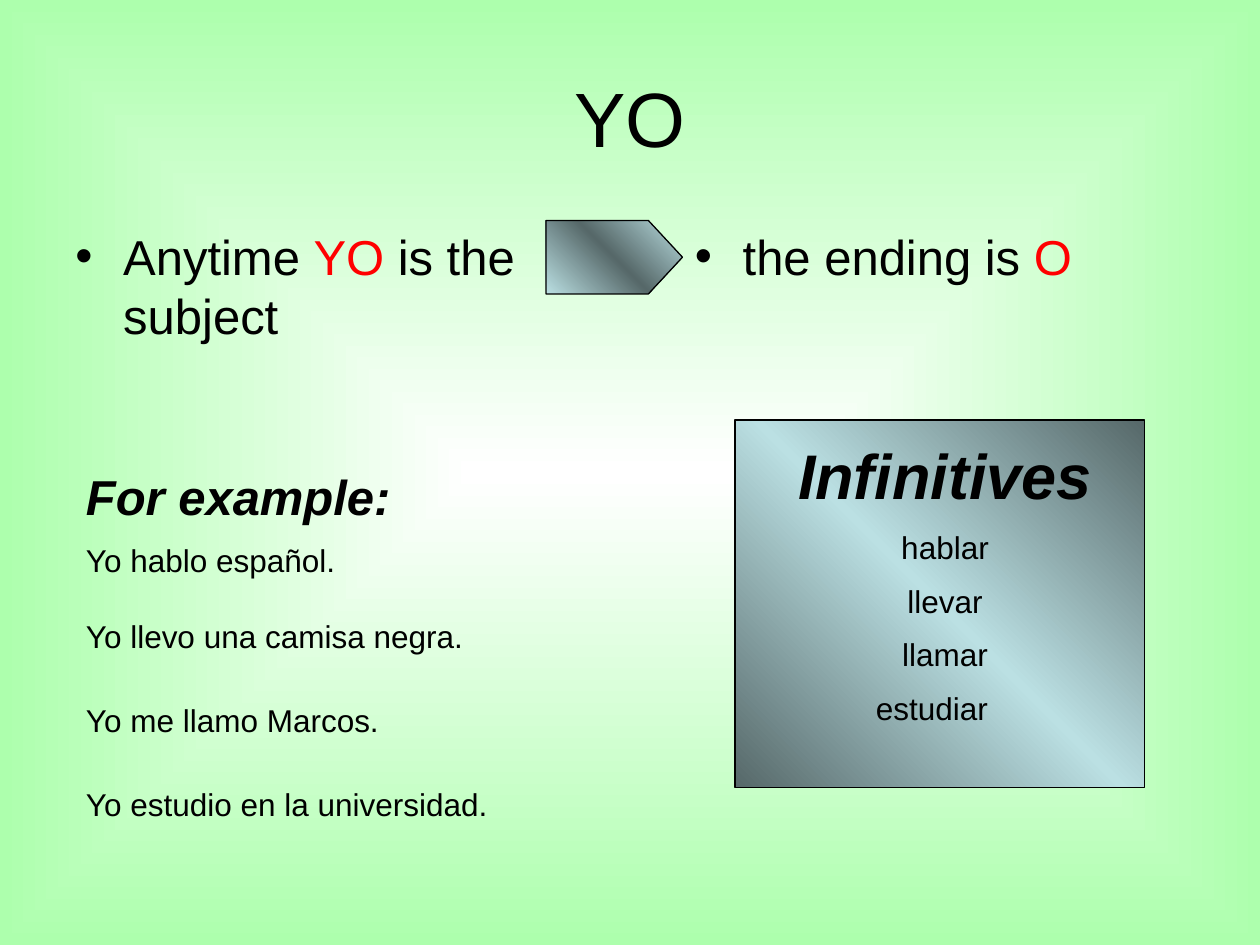
from dataclasses import dataclass

from lxml import etree
from pptx import Presentation
from pptx.dml.color import RGBColor
from pptx.enum.shapes import MSO_SHAPE
from pptx.enum.text import MSO_ANCHOR, MSO_AUTO_SIZE, PP_ALIGN
from pptx.oxml.ns import qn
from pptx.util import Inches, Pt

RECT, PENTAGON = MSO_SHAPE.RECTANGLE, MSO_SHAPE.PENTAGON
LEFT, CENTER = PP_ALIGN.LEFT, PP_ALIGN.CENTER
MIDDLE, TOP = MSO_ANCHOR.MIDDLE, MSO_ANCHOR.TOP
GROW, FIXED = MSO_AUTO_SIZE.SHAPE_TO_FIT_TEXT, MSO_AUTO_SIZE.NONE

WIDTH, HEIGHT = Inches(10), Inches(7.5)
COLS, ROWS = 120, 90
FONT = "Arial"
COLORS = {
    "text": "000000", "accent": "FF0000", "white": "FFFFFF",
    "green": "ADFFAD", "light": "BBE0E3", "dark": "566869",
}


@dataclass
class Box:
    col: float
    row: float
    cols: float
    rows: float

    def emu(self) -> tuple[int, int, int, int]:
        return (round(self.col * WIDTH / COLS), round(self.row * HEIGHT / ROWS),
                round(self.cols * WIDTH / COLS), round(self.rows * HEIGHT / ROWS))


@dataclass
class Run:
    text: str
    size: int = 18
    strong: bool = False
    color: str = "text"


@dataclass
class Para:
    runs: list[Run]
    align: PP_ALIGN = LEFT
    before: int = 50
    bullet: bool = False
    right: float = 0


@dataclass
class TextBlock:
    box: Box
    paras: list[Para]
    auto_size: MSO_AUTO_SIZE = GROW


@dataclass
class Panel:
    box: Box
    kind: MSO_SHAPE
    stops: list[str]
    adj: float | None = None


def add_gradient(props, stops: list[str], centred: bool = False) -> None:
    old = props.find(qn("a:solidFill"))
    grad = etree.Element(qn("a:gradFill"), rotWithShape="1")
    gs_list = etree.SubElement(grad, qn("a:gsLst"))
    for i, name in enumerate(stops):
        pos = str(100000 * i // (len(stops) - 1))
        gs = etree.SubElement(gs_list, qn("a:gs"), pos=pos)
        etree.SubElement(gs, qn("a:srgbClr"), val=COLORS[name])
    if centred:
        shade = etree.SubElement(grad, qn("a:path"), {"path": "shape"})
        sides = dict.fromkeys("ltrb", "50000")
        etree.SubElement(shade, qn("a:fillToRect"), sides)
    else:
        etree.SubElement(grad, qn("a:lin"), ang=str(315 * 60000), scaled="1")
    props.replace(old, grad)


def add_panel(s, panel: Panel) -> None:
    sp = s.shapes.add_shape(panel.kind, *panel.box.emu())
    sp.shadow.inherit = False
    if panel.adj is not None:
        sp.adjustments[0] = panel.adj
    sp.fill.solid()
    add_gradient(sp.element.spPr, panel.stops)
    sp.line.color.rgb = RGBColor.from_string(COLORS["text"])
    sp.line.width = Pt(0.75)


def write_para(p, para: Para) -> None:
    p.alignment = para.align
    props = p._p.get_or_add_pPr()
    before = etree.SubElement(props, qn("a:spcBef"))
    etree.SubElement(before, qn("a:spcPct"), val=str(para.before * 1000))
    if para.bullet:
        props.set("marL", str(Inches(0.38)))
        props.set("indent", str(-Inches(0.38)))
        etree.SubElement(props, qn("a:buFont"), typeface=FONT)
        etree.SubElement(props, qn("a:buChar"), char="•")
    if para.right:
        props.set("marR", str(Inches(para.right)))
    for run in para.runs:
        r = p.add_run()
        r.text = run.text
        formats = {"name": FONT, "size": Pt(run.size),
                   "bold": run.strong, "italic": run.strong}
        for key, value in formats.items():
            setattr(r.font, key, value)
        r.font.color.rgb = RGBColor.from_string(COLORS[run.color])


def write_text(tf, paras: list[Para], anchor: MSO_ANCHOR, auto_size: MSO_AUTO_SIZE) -> None:
    formats = {"word_wrap": True, "vertical_anchor": anchor, "auto_size": auto_size}
    for key, value in formats.items():
        setattr(tf, key, value)
    for i, para in enumerate(paras):
        write_para(tf.add_paragraph() if i else tf.paragraphs[0], para)


def add_text(s, block: TextBlock) -> None:
    sp = s.shapes.add_textbox(*block.box.emu())
    write_text(sp.text_frame, block.paras, TOP, block.auto_size)


def set_title(s, box: Box, text: str) -> None:
    sp = s.shapes.title
    sp.left, sp.top, sp.width, sp.height = box.emu()
    para = Para([Run(text, 44)], CENTER, before=0)
    write_text(sp.text_frame, [para], MIDDLE, FIXED)


PANELS = [
    Panel(Box(70, 40, 39, 35), RECT, ["dark", "light", "dark"]),
    Panel(Box(52, 21, 13, 7), PENTAGON, ["light", "dark", "light"], 0.464),
]
RULES = [
    TextBlock(Box(6, 21, 53, 13), [Para([
        Run("Anytime ", 28), Run("YO", 28, color="accent"),
        Run(" is the subject", 28)], before=20, bullet=True)], FIXED),
    TextBlock(Box(65, 21, 53, 12), [Para([
        Run("the ending is ", 28), Run("O", 28, color="accent")],
        before=20, bullet=True)], FIXED),
]
INTRO = TextBlock(Box(7, 43.8, 92, 12.2), [
    Para([Run("For example:", 28, True)]), Para([Run("Yo hablo español.")])])
EXAMPLES = [
    TextBlock(Box(7, 58.2 + 8 * i, 94, 4.8), [Para([Run(text)])])
    for i, text in enumerate(["Yo llevo una camisa negra.", "Yo me llamo Marcos.",
                              "Yo estudio en la universidad."])
]
INFINITIVES = TextBlock(Box(73, 41, 34, 30.1), [
    Para([Run("Infinitives", 36, True)], CENTER),
    *[Para([Run(verb)], CENTER) for verb in ("hablar", "llevar", "llamar")],
    Para([Run("estudiar")], CENTER, right=0.21)])


def main() -> None:
    prs = Presentation()
    prs.slide_width, prs.slide_height = WIDTH, HEIGHT
    s = prs.slides.add_slide(prs.slide_layouts[5])
    s.background.fill.solid()
    add_gradient(s.element.find(".//" + qn("p:bgPr")), ["white", "green"], True)
    set_title(s, Box(6, 3.6, 108, 15), "YO")
    for panel in PANELS:
        add_panel(s, panel)
    for block in [*RULES, INTRO, *EXAMPLES, INFINITIVES]:
        add_text(s, block)
    prs.save("out.pptx")


if __name__ == "__main__":
    main()
